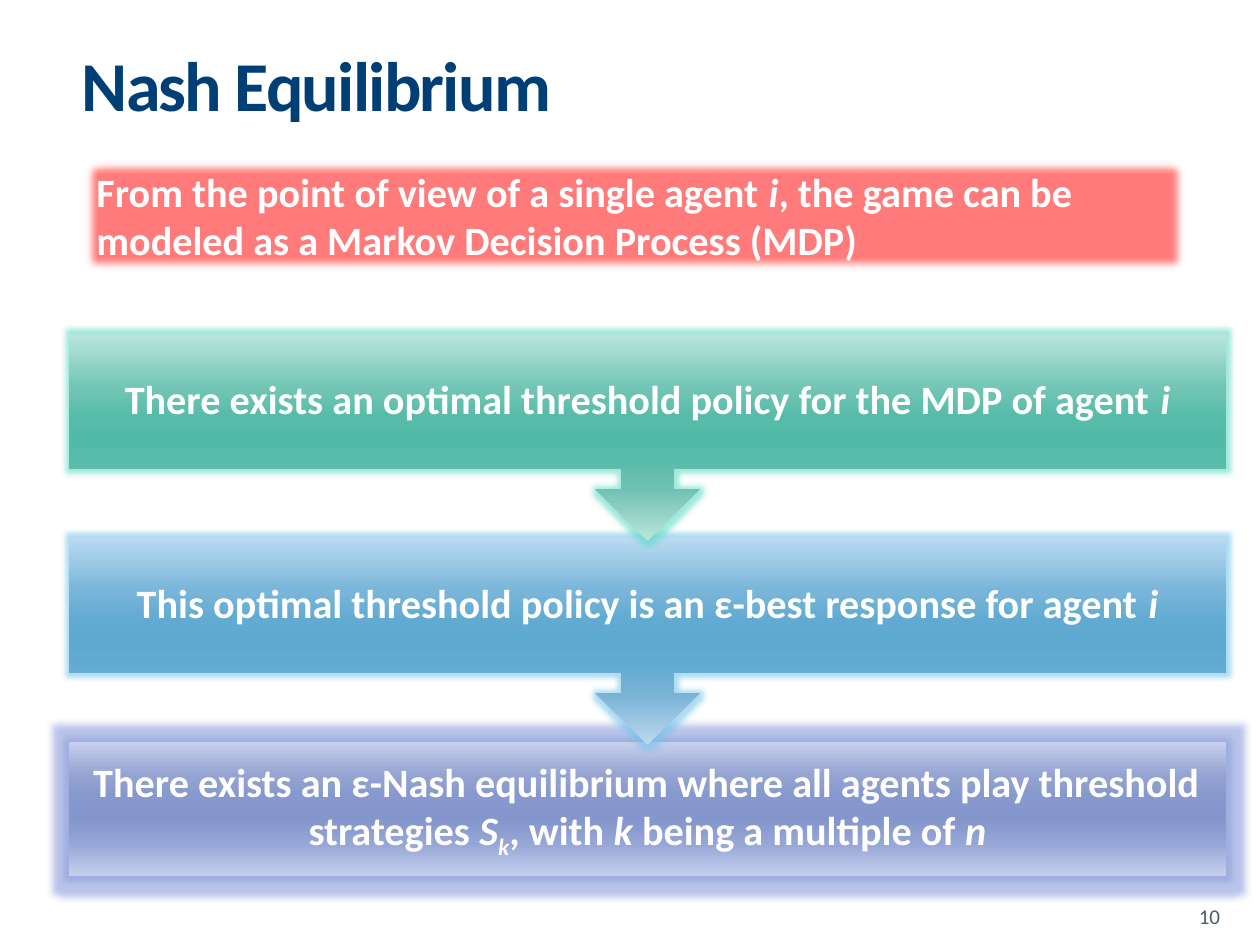
from lxml import etree
from pptx import Presentation
from pptx.dml.color import RGBColor
from pptx.enum.shapes import MSO_SHAPE
from pptx.enum.text import MSO_ANCHOR, PP_ALIGN
from pptx.oxml import parse_xml
from pptx.oxml.ns import qn
from pptx.util import Pt

RECTANGLE, CALLOUT = MSO_SHAPE.RECTANGLE, MSO_SHAPE.UP_ARROW_CALLOUT
MIDDLE, BOTTOM = MSO_ANCHOR.MIDDLE, MSO_ANCHOR.BOTTOM
LEFT, CENTER = PP_ALIGN.LEFT, PP_ALIGN.CENTER
NAMESPACE = "http://schemas.openxmlformats.org/drawingml/2006/main"

FONT = "Calibri"
NAVY, GRAY, WHITE, RED, DARK_RED = "003F75", "4E5B6F", "FFFFFF", "FF0000", "C00000"
STOP_POSITIONS = (0, 25, 40, 50, 60, 75, 100)
GREENS = ("BBE5DB", "71C1B2", "57BBA9", "53BAA8", "57BBA9", "74C6B6", "B9E6DC")
BLUES = ("BBD9F0", "78B2D5", "61AAD1", "5DA9D0", "61AAD1", "7AB6D9", "B9DAF2")
VIOLETS = ("C7CFEC", "94A3D1", "8698CD", "8496CC", "8698CD", "95A5D5", "C5CEED")

# Runs are (text, style); style is "" (plain), "i" (italic) or "sub" (italic subscript)
PREMISE = [("From the point of view of a single agent ", ""), ("i", "i"),
           (", the game can be modeled as a Markov Decision Process (MDP)", "")]
# Shape, gradient, glow colour, glow radius, runs
STEPS = [
    (CALLOUT, GREENS, "5FD9C5", 5,
     [("There exists an optimal threshold policy for the MDP of agent ", ""), ("i", "i")]),
    (CALLOUT, BLUES, "74C4EA", 5,
     [("This optimal threshold policy is an ε-best response for agent ", ""), ("i", "i")]),
    (RECTANGLE, VIOLETS, "8C9DDC", 8,
     [("There exists an ε-Nash equilibrium where all agents play threshold strategies ", ""),
      ("S", "i"), ("k", "sub"), (", with ", ""), ("k ", "i"),
      ("being a multiple of ", ""), ("n", "i")]),
]


def color(hex_value):
    return RGBColor.from_string(hex_value)


def format_font(font, size, hex_value, bold=False):
    font.name, font.size, font.bold = FONT, Pt(size), bold
    font.color.rgb = color(hex_value)


def add_runs(paragraph, runs):
    for text, style in runs:
        run = paragraph.add_run()
        run.text = text
        format_font(run.font, 23, WHITE, bold=True)
        run.font.italic = bool(style)
        if style == "sub":
            run.font._element.set("baseline", "-25000")


def set_gradient(shape, stops):
    """Fill with vertical colour stops, which python-pptx cannot add."""
    shape.fill.background()
    old_fill = shape._element.spPr.find(qn("a:noFill"))
    stop_xml = "".join(
        f'<a:gs pos="{position * 1000}"><a:srgbClr val="{stop}"/></a:gs>'
        for position, stop in zip(STOP_POSITIONS, stops))
    old_fill.getparent().replace(old_fill, parse_xml(
        f'<a:gradFill xmlns:a="{NAMESPACE}" rotWithShape="1"><a:gsLst>{stop_xml}</a:gsLst>'
        '<a:lin ang="5400000" scaled="0"/></a:gradFill>'))


def add_effect(shape, effect_xml):
    shape.shadow.inherit = False
    effects = shape._element.spPr.find(qn("a:effectLst"))
    effects.append(parse_xml(effect_xml))


def place_title(slide, left, top, width, height):
    title = slide.shapes.title
    title.left, title.top, title.width, title.height = map(Pt, (left, top, width, height))
    title.text_frame.text = "Nash Equilibrium"
    title.text_frame.vertical_anchor = MIDDLE
    paragraph = title.text_frame.paragraphs[0]
    paragraph.alignment = LEFT
    font = paragraph.runs[0].font
    format_font(font, 40, NAVY, bold=True)
    font._element.set("spc", "-100")


def add_premise(slide, left, top, width, height):
    box = slide.shapes.add_shape(RECTANGLE, Pt(left), Pt(top), Pt(width), Pt(height))
    box.fill.solid()
    box.fill.fore_color.rgb = color(RED)
    fill_color = box._element.spPr.find(qn("a:solidFill"))[0]
    etree.SubElement(fill_color, qn("a:alpha"), val="52000")
    box.line.color.rgb = color(DARK_RED)
    box.line.width = Pt(2.5)
    add_effect(box, f'<a:softEdge xmlns:a="{NAMESPACE}" rad="{Pt(5)}"/>')
    frame = box.text_frame
    frame.word_wrap = True
    frame.vertical_anchor = MIDDLE
    frame.paragraphs[0].alignment = LEFT
    add_runs(frame.paragraphs[0], PREMISE)


def add_step(shapes, left, top, width, body_height, step):
    """Add one step; a callout is turned so that its arrow hangs below the body."""
    kind, stops, glow, radius, runs = step
    height = 118 if kind == CALLOUT else body_height
    shape = shapes.add_shape(kind, Pt(left), Pt(top), Pt(width), Pt(height))
    shape.rotation = 180 if kind == CALLOUT else 0
    set_gradient(shape, stops)
    shape.line.fill.background()
    add_effect(shape, f'<a:glow xmlns:a="{NAMESPACE}" rad="{Pt(radius)}">'
                      f'<a:srgbClr val="{glow}"><a:alpha val="60000"/></a:srgbClr></a:glow>')

    frame = shapes.add_textbox(Pt(left), Pt(top), Pt(width), Pt(body_height)).text_frame
    frame.word_wrap = True
    frame.vertical_anchor = MIDDLE
    frame.margin_left = frame.margin_right = frame.margin_top = frame.margin_bottom = Pt(13)
    paragraph = frame.paragraphs[0]
    paragraph.alignment = CENTER
    paragraph.line_spacing = 0.9
    add_runs(paragraph, runs)


def add_process(slide, left, top, width, height):
    """Stack the steps, adding the last first so that each arrow overlaps the next box."""
    body_height = 76.5
    pitch = (height - body_height) / (len(STEPS) - 1)
    group = slide.shapes.add_group_shape()
    for index, step in reversed(list(enumerate(STEPS))):
        add_step(group.shapes, left, top + index * pitch, width, body_height, step)


def add_slide_number(slide, left, top, width, height):
    frame = slide.shapes.add_textbox(Pt(left), Pt(top), Pt(width), Pt(height)).text_frame
    frame.word_wrap = True
    frame.vertical_anchor = BOTTOM
    frame.text = "10"
    format_font(frame.paragraphs[0].runs[0].font, 12, GRAY)


def main():
    presentation = Presentation()
    presentation.slide_width, presentation.slide_height = Pt(720), Pt(540)
    slide = presentation.slides.add_slide(presentation.slide_layouts[5])
    place_title(slide, 39.5, 11.5, 646, 72)
    add_process(slide, 39.5, 191, 661, 309.5)
    add_slide_number(slide, 678, 505.5, 36, 29)
    add_premise(slide, 48, 91.5, 629.5, 63.5)
    presentation.save("out.pptx")


if __name__ == "__main__":
    main()
